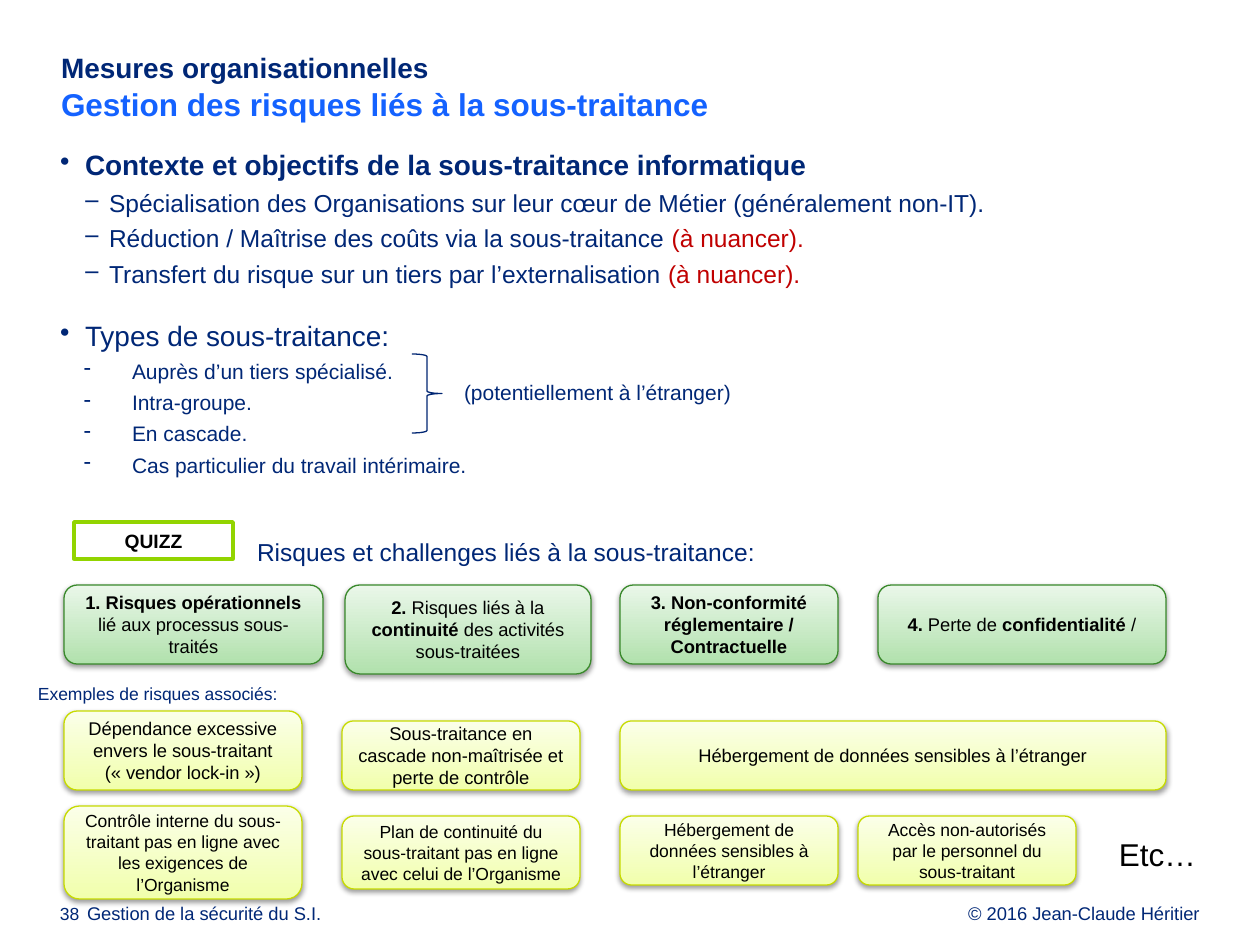
"""Build the slide on the risks of subcontracting."""
from dataclasses import dataclass

from lxml import etree
from pptx import Presentation
from pptx import util as u
from pptx.dml.color import RGBColor
from pptx.enum import shapes, text
from pptx.oxml.ns import qn

PX = 914400 / 126
LEFT, MID, RIGHT = text.PP_ALIGN.LEFT, text.PP_ALIGN.CENTER, text.PP_ALIGN.RIGHT


@dataclass(frozen=True)
class Theme:
    font: str = "Arial"
    navy: str = "002776"
    blue: str = "1462FF"
    red: str = "C00000"
    black: str = "000000"
    white: str = "FFFFFF"
    brace: str = "002673"
    quiz: str = "92D400"
    green: tuple = ("B1E1AD", "EAF7E9", "39892B")
    lime: tuple = ("F1FFAC", "FBFFE9", "C7DB00")
    big: float = 18
    head: float = 16
    sub: float = 14
    item: float = 12
    tag: float = 11
    card: float = 10.5
    small: float = 10


T = Theme()


def px(*vals):
    return [u.Emu(round(v * PX)) for v in vals]


def rgb(code):
    return RGBColor.from_string(code)


def put(par, words, size=T.card, color=T.navy, bold=False, high=None,
        align=LEFT, before=0, after=0, lead=None, mark=None, hang=(0, 0)):
    par.alignment = align
    par.space_before, par.space_after = u.Pt(before), u.Pt(after)
    if lead:
        par.line_spacing = u.Pt(lead)
    for num, part in enumerate(words.split("|")):
        if not part:
            continue
        look = {"color": color, "bold": bold}
        if num % 2:
            look.update(high or {"bold": True})
        run = par.add_run()
        run.text = part
        run.font.name, run.font.size = T.font, u.Pt(size)
        run.font.bold = look["bold"]
        run.font.color.rgb = rgb(look["color"])
    if mark:
        props = par._p.get_or_add_pPr()
        left, back = px(*hang)
        props.set("marL", str(left))
        props.set("indent", str(-back))
        etree.SubElement(props, qn("a:buChar"), char=mark)


class Deck:
    """Hold the theme and the current slide."""

    def __init__(self, theme):
        self.theme = theme
        self.prs = Presentation()
        self.prs.slide_width, self.prs.slide_height = px(1260, 945)
        self.slide = self.prs.slides.add_slide(self.prs.slide_layouts[6])

    def fill(self, frame, lines, **fmt):
        for num, line in enumerate(lines):
            words, extra = (line, {}) if isinstance(line, str) else line
            par = frame.add_paragraph() if num else frame.paragraphs[0]
            put(par, words, **{**fmt, **extra})

    def text(self, box, *lines, inset=0, wrap=True, **fmt):
        frame = self.slide.shapes.add_textbox(*px(*box)).text_frame
        frame.word_wrap = wrap
        frame.margin_left = frame.margin_right = px(inset)[0]
        frame.margin_top = frame.margin_bottom = px(inset / 2)[0]
        self.fill(frame, lines, **fmt)

    def shape(self, kind, box, line, width=0.75):
        item = self.slide.shapes.add_shape(kind, *px(*box))
        item.shadow.inherit = False
        item.line.color.rgb = rgb(line)
        item.line.width = u.Pt(width)
        return item

    def brace(self, box):
        item = self.shape(shapes.MSO_SHAPE.RIGHT_BRACE, box, self.theme.brace)
        item.fill.background()

    def tag(self, box, words):
        item = self.shape(shapes.MSO_SHAPE.RECTANGLE, box, self.theme.quiz, 2)
        item.fill.solid()
        item.fill.fore_color.rgb = rgb(self.theme.white)
        self.fill(item.text_frame, [words], size=self.theme.tag,
                  color=self.theme.black, bold=True, align=MID)

    def card(self, box, words, tone, size=T.card):
        kind = shapes.MSO_SHAPE.FLOWCHART_ALTERNATE_PROCESS
        item = self.shape(kind, box, tone[2])
        item.fill.gradient()
        item.fill.gradient_angle = 90
        for stop, code in zip(item.fill.gradient_stops, tone):
            stop.color.rgb = rgb(code)
        self.shade(item)
        frame = item.text_frame
        frame.word_wrap = True
        frame.vertical_anchor = text.MSO_ANCHOR.MIDDLE
        self.fill(frame, words.split("\n"), size=size,
                  color=self.theme.black, align=MID)

    def shade(self, item):
        fx = item._element.spPr.find(qn("a:effectLst"))
        cast = etree.SubElement(fx, qn("a:outerShdw"), blurRad=str(u.Pt(3.1)),
                                dist=str(u.Pt(1.6)), dir="5400000", rotWithShape="0")
        tint = etree.SubElement(cast, qn("a:srgbClr"), val=self.theme.black)
        etree.SubElement(tint, qn("a:alpha"), val="38000")

    def save(self):
        self.prs.save("out.pptx")


def main():
    deck = Deck(T)
    top = {"size": T.head, "mark": "•", "hang": (25, 25)}
    dash = {"size": T.sub, "mark": "‒", "hang": (49, 25), "high": {"color": T.red}}
    kind = {"size": T.item, "mark": "-", "hang": (72, 48)}

    deck.text((61, 51, 1155, 87),
              ("Mesures organisationnelles", {"size": T.head}),
              ("Gestion des risques liés à la sous-traitance", {"color": T.blue}),
              size=T.big, bold=True)
    deck.text((60, 148, 1115, 330),
              ("Contexte et objectifs de la sous-traitance informatique",
               {**top, "bold": True}),
              ("Spécialisation des Organisations sur leur cœur de Métier "
               "(généralement non-IT).", dash),
              ("Réduction / Maîtrise des coûts via la sous-traitance |(à nuancer).", dash),
              ("Transfert du risque sur un tiers par l’externalisation |(à nuancer).", dash),
              ("Types de sous-traitance:", {**top, "before": 14}),
              ("Auprès d’un tiers spécialisé.", kind),
              ("Intra-groupe.", kind),
              ("En cascade.", kind),
              ("Cas particulier du travail intérimaire.", kind),
              after=3.5)
    deck.brace((412, 354, 30, 79))
    deck.text((451, 373, 295, 38), "(potentiellement à l’étranger)",
              inset=13, wrap=False, size=T.item)

    deck.tag((74, 522, 159, 37), "QUIZZ")
    deck.text((257, 537, 600, 30), "Risques et challenges liés à la sous-traitance:",
              size=T.sub)

    risks = [
        (64, 259, 79, "|1. Risques opérationnels |lié aux processus sous-traités"),
        (345, 246, 89, "|2. |Risques liés à la |continuité |des activités sous-traitées"),
        (620, 218, 79, "|3. Non-conformité réglementaire / Contractuelle|"),
        (878, 288, 79, "|4. |Perte de |confidentialité| /"),
    ]
    for left, wide, high, words in risks:
        deck.card((left, 585, wide, high), words, T.green)

    deck.text((25, 677, 267, 34), "Exemples de risques associés:",
              inset=13, wrap=False, size=T.small)
    cases = [
        (64, 711, 238, 79, T.card, "Dépendance excessive envers le sous-traitant\n"
                                   "(« vendor lock-in »)"),
        (342, 721, 238, 69, T.card, "Sous-traitance en cascade non-maîtrisée "
                                    "et perte de contrôle"),
        (620, 721, 546, 69, T.card, "Hébergement de données sensibles à l’étranger"),
        (64, 806, 238, 93, T.small, "Contrôle interne du sous-traitant pas en ligne "
                                    "avec les exigences de l’Organisme"),
        (342, 816, 238, 73, T.small, "Plan de continuité du sous-traitant pas en ligne "
                                     "avec celui de l’Organisme"),
        (620, 816, 218, 69, T.small, "Hébergement de données sensibles à l’étranger"),
        (858, 816, 218, 69, T.small, "Accès non-autorisés par le personnel "
                                     "du sous-traitant"),
    ]
    for left, y, wide, high, size, words in cases:
        deck.card((left, y, wide, high), words, T.lime, size)
    deck.text((1106, 829, 103, 50), "Etc…", inset=13, wrap=False,
              size=T.big, color=T.black)

    deck.text((60, 905, 26, 20), "38", size=T.small, lead=10.8)
    deck.text((87, 905, 319, 20), "Gestion de la sécurité du S.I.", lead=10.8)
    deck.text((882, 905, 318, 20), "© 2016 Jean-Claude Héritier",
              align=RIGHT, lead=10.8)
    deck.save()


if __name__ == "__main__":
    main()
